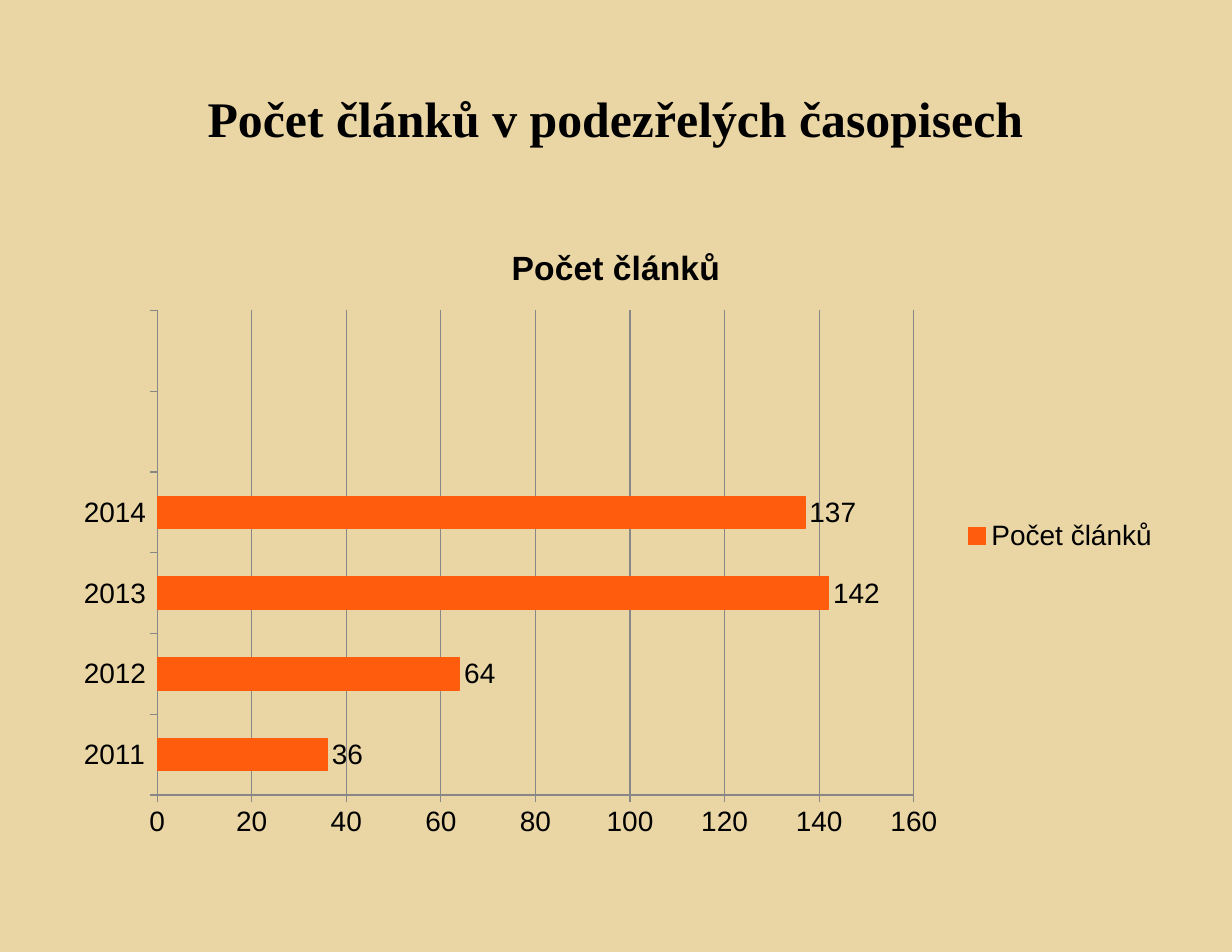
"""Build a slide with a bar chart of article counts by year."""
from dataclasses import dataclass
from typing import Optional

import pptx
import pptx.chart.data
import pptx.dml.color
import pptx.enum.chart
import pptx.enum.text
import pptx.util

Pt = pptx.util.Pt


@dataclass(frozen=True)
class Theme:
    back: str = "EAD6A4"
    ink: str = "000000"
    bar: str = "FF5D0D"
    grid: str = "878787"
    serif: str = "Times New Roman"
    sans: str = "Arial"
    head: float = 32
    sub: float = 21.6
    body: float = 18


@dataclass(frozen=True)
class Box:
    left: float
    top: float
    width: float
    height: float

    def area(self) -> tuple:
        return Pt(self.left), Pt(self.top), Pt(self.width), Pt(self.height)


@dataclass(frozen=True)
class Year:
    name: str
    count: Optional[int] = None


THEME = Theme()
SIZE = (792, 612)
HEAD = Box(39.6, 24.5, 712.8, 102.2)
PLOT = Box(39.6, 142.6, 712.8, 403.9)
LABEL = "Počet článků"
YEARS = [Year("2011", 36), Year("2012", 64), Year("2013", 142),
         Year("2014", 137), Year(""), Year("")]


def tint(code: str) -> pptx.dml.color.RGBColor:
    return pptx.dml.color.RGBColor.from_string(code)


def style(font, face: str, size: float, bold: bool = False) -> None:
    font.name, font.size, font.bold = face, Pt(size), bold
    font.color.rgb = tint(THEME.ink)


def write(frame, text: str, *, face: str, size: float, bold: bool = False) -> None:
    para = frame.paragraphs[0]
    para.alignment = pptx.enum.text.PP_ALIGN.CENTER
    run = para.add_run()
    run.text = text
    style(run.font, face, size, bold)


def rule(line, color: str) -> None:
    line.color.rgb = tint(color)
    line.width = Pt(0.75)


def add_head(slide, box: Box) -> None:
    frame = slide.shapes.add_textbox(*box.area()).text_frame
    frame.word_wrap = True
    frame.vertical_anchor = pptx.enum.text.MSO_ANCHOR.MIDDLE
    write(frame, "Počet článků v podezřelých časopisech",
          face=THEME.serif, size=THEME.head, bold=True)


def add_plot(slide, box: Box, years: list[Year]) -> None:
    kinds = pptx.enum.chart
    data = pptx.chart.data.CategoryChartData()
    data.categories = [year.name for year in years]
    data.add_series(LABEL, [year.count for year in years])
    chart = slide.shapes.add_chart(
        kinds.XL_CHART_TYPE.BAR_CLUSTERED, *box.area(), data).chart
    style(chart.font, THEME.sans, THEME.body)
    chart.has_title = True
    write(chart.chart_title.text_frame, LABEL,
          face=THEME.sans, size=THEME.sub, bold=True)
    chart.chart_title.include_in_layout = False
    chart.has_legend = True
    chart.legend.position = kinds.XL_LEGEND_POSITION.RIGHT
    chart.legend.include_in_layout = False

    for axis in (chart.category_axis, chart.value_axis):
        axis.major_tick_mark = kinds.XL_TICK_MARK.OUTSIDE
        axis.minor_tick_mark = kinds.XL_TICK_MARK.NONE
        rule(axis.format.line, THEME.grid)
    chart.value_axis.has_major_gridlines = True
    rule(chart.value_axis.major_gridlines.format.line, THEME.grid)

    plot = chart.plots[0]
    plot.gap_width = 150
    plot.vary_by_categories = False
    row = plot.series[0]
    row.format.fill.solid()
    row.format.fill.fore_color.rgb = tint(THEME.bar)
    rule(row.format.line, THEME.bar)
    tags = row.data_labels
    tags.show_value = True
    tags.position = kinds.XL_LABEL_POSITION.OUTSIDE_END
    style(tags.font, THEME.sans, THEME.body)


def main() -> None:
    deck = pptx.Presentation()
    deck.slide_width, deck.slide_height = map(Pt, SIZE)
    slide = deck.slides.add_slide(deck.slide_layouts[6])
    slide.background.fill.solid()
    slide.background.fill.fore_color.rgb = tint(THEME.back)
    add_head(slide, HEAD)
    add_plot(slide, PLOT, YEARS)
    deck.save("out.pptx")


if __name__ == "__main__":
    main()
